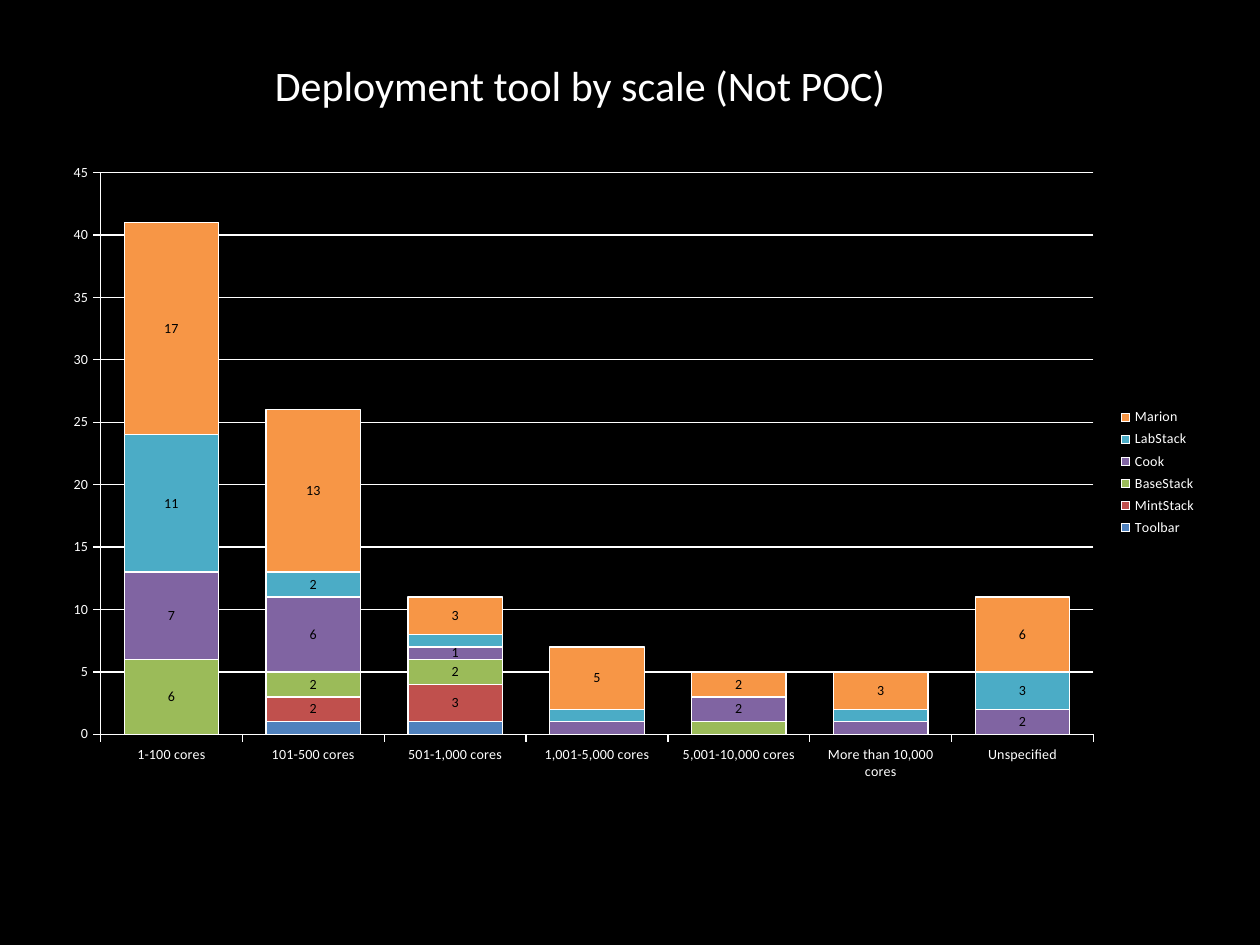
from lxml import etree
from pptx import Presentation
from pptx.chart.data import CategoryChartData
from pptx.dml.color import RGBColor
from pptx.enum.chart import XL_CHART_TYPE, XL_LABEL_POSITION, XL_LEGEND_POSITION, XL_TICK_MARK
from pptx.enum.text import MSO_ANCHOR, PP_ALIGN
from pptx.oxml.ns import qn
from pptx.util import Inches, Pt

COLUMN_STACKED = XL_CHART_TYPE.COLUMN_STACKED
LABEL_CENTER = XL_LABEL_POSITION.CENTER
LEGEND_RIGHT = XL_LEGEND_POSITION.RIGHT
TICK_OUTSIDE = XL_TICK_MARK.OUTSIDE
TICK_NONE = XL_TICK_MARK.NONE
MIDDLE = MSO_ANCHOR.MIDDLE
CENTER = PP_ALIGN.CENTER

FONT = "Calibri"
BLACK = "000000"
WHITE = "FFFFFF"
TITLE_ONLY = 5

SCALES = ["1-100 cores", "101-500 cores", "501-1,000 cores", "1,001-5,000 cores",
          "5,001-10,000 cores", "More than 10,000 cores", "Unspecified"]
TOOLS = [
    ("Toolbar", "4F81BD", [None, 1, 1, None, None, None, None], [1, 2]),
    ("MintStack", "C0504D", [None, 2, 3, None, None, None, None], []),
    ("BaseStack", "9BBB59", [6, 2, 2, None, 1, None, None], [4]),
    ("Cook", "8064A2", [7, 6, 1, 1, 2, 1, 2], [3, 5]),
    ("LabStack", "4BACC6", [11, 2, 1, 1, None, 1, 3], [2, 3, 5]),
    ("Marion", "F79646", [17, 13, 3, 5, 2, 3, 6], []),
]


def color(value):
    return RGBColor.from_string(value)


def format_font(font, size, font_color):
    font.name = FONT
    font.size = Pt(size)
    font.bold = False
    font.color.rgb = color(font_color)


def format_line(line, width=0.75):
    line.color.rgb = color(WHITE)
    line.width = Pt(width)


def write_text(shape, text, size=24, font_color=WHITE, alignment=CENTER):
    frame = shape.text_frame
    frame.word_wrap = False
    frame.vertical_anchor = MIDDLE
    paragraph = frame.paragraphs[0]
    paragraph.alignment = alignment
    run = paragraph.add_run()
    run.text = text
    format_font(run.font, size, font_color)


def place_title(slide, left, top, width, height):
    title = slide.shapes.title
    title.left, title.top, title.width, title.height = left, top, width, height
    write_text(title, "Deployment tool by scale (Not POC)")


def hide_labels(labels, indexes):
    for position, index in enumerate(indexes):
        label = etree.Element(qn("c:dLbl"))
        etree.SubElement(label, qn("c:idx")).set("val", str(index))
        etree.SubElement(label, qn("c:delete")).set("val", "1")
        labels._element.insert(position, label)


def format_series(series, fill_color, hidden):
    series.format.fill.solid()
    series.format.fill.fore_color.rgb = color(fill_color)
    format_line(series.format.line)
    labels = series.data_labels
    labels.show_value = True
    labels.position = LABEL_CENTER
    format_font(labels.font, 8, BLACK)
    hide_labels(labels, hidden)


def place_chart(slide, left, top, width, height):
    data = CategoryChartData()
    data.categories = SCALES
    for name, _, values, _ in TOOLS:
        data.add_series(name, values)
    chart = slide.shapes.add_chart(COLUMN_STACKED, left, top, width, height, data).chart
    format_font(chart.font, 8, WHITE)
    chart.has_title = False
    chart.has_legend = True
    chart.legend.position = LEGEND_RIGHT
    chart.legend.include_in_layout = False

    plot = chart.plots[0]
    plot.gap_width = 50
    plot.overlap = 100
    plot.vary_by_categories = False
    for series, (_, fill_color, _, hidden) in zip(plot.series, TOOLS):
        format_series(series, fill_color, hidden)

    for axis in (chart.category_axis, chart.value_axis):
        axis.major_tick_mark = TICK_OUTSIDE
        axis.minor_tick_mark = TICK_NONE
        format_line(axis.format.line)
    chart.value_axis.minimum_scale = 0
    chart.value_axis.maximum_scale = 45
    chart.value_axis.major_unit = 5
    chart.value_axis.has_major_gridlines = True
    format_line(chart.value_axis.major_gridlines.format.line)


def main():
    presentation = Presentation()
    presentation.slide_width = Inches(10)
    presentation.slide_height = Inches(7.5)
    slide = presentation.slides.add_slide(presentation.slide_layouts[TITLE_ONLY])
    slide.background.fill.solid()
    slide.background.fill.fore_color.rgb = color(BLACK)
    place_chart(slide, Inches(0.4), Inches(1.2), Inches(9.2), Inches(5.1))
    place_title(slide, Inches(2.05), Inches(0.42), Inches(5.11), Inches(0.5))
    presentation.save("out.pptx")


if __name__ == "__main__":
    main()
